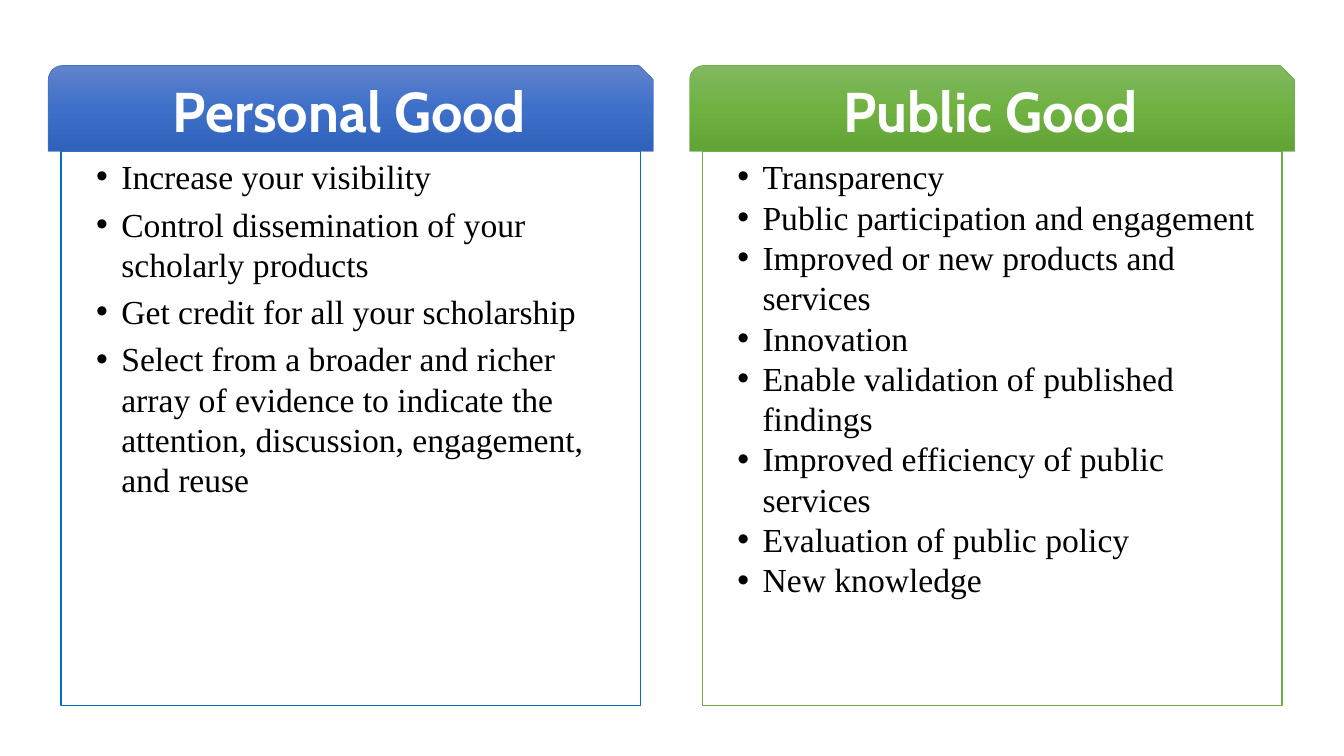
from copy import deepcopy
from dataclasses import dataclass

from lxml import etree
from pptx import Presentation
from pptx import util as u
from pptx.dml.color import RGBColor
from pptx.enum import shapes, text
from pptx.oxml import ns


@dataclass(frozen=True)
class Theme:
    head_font: str = "Cabin"
    body_font: str = "Times New Roman"
    head_size: int = 40
    body_size: int = 24
    leading: float = 28.8
    white: str = "FFFFFF"
    ink: str = "000000"
    blue: tuple = ("6183CB", "3E70CA", "3062BB")
    green: tuple = ("81B861", "6FB242", "62A336")
    blue_edge: str = "4472C4"
    blue_frame: str = "0070C0"
    green_edge: str = "70AD47"


T = Theme()
WIDE, HIGH = 13.33, 7.5
LEFT, TOP, COL, GAP = 0.48, 0.65, 6, 0.36
HEAD, BODY, INSET = 0.85, 5.5, 0.125

PANELS = [
    dict(title="Personal Good", shades=T.blue, edge=T.blue_edge,
         frame=T.blue_frame, gap=5, items=[
             "Increase your visibility",
             "Control dissemination of your scholarly products",
             "Get credit for all your scholarship",
             "Select from a broader and richer array of evidence to indicate "
             "the attention, discussion, engagement, and reuse"]),
    dict(title="Public Good", shades=T.green, edge=T.green_edge,
         frame=T.green_edge, gap=0, items=[
             "Transparency",
             "Public participation and engagement",
             "Improved or new products and services",
             "Innovation",
             "Enable validation of published findings",
             "Improved efficiency of public services",
             "Evaluation of public policy",
             "New knowledge"]),
]


def block(slide, kind, box, line, weight):
    shape = slide.shapes.add_shape(kind, *(u.Inches(n) for n in box))
    shape.shadow.inherit = False
    shape.line.color.rgb = RGBColor.from_string(line)
    shape.line.width = u.Pt(weight)
    return shape


def blend(shape, shades):
    """Fill a shape from top to bottom with evenly spaced shades."""
    fill = shape.fill
    fill.gradient()
    fill.gradient_angle = 270
    stops = shape._element.spPr.find(ns.qn("a:gradFill")).find(ns.qn("a:gsLst"))
    while len(stops) < len(shades):
        stops.append(deepcopy(stops[0]))
    for i, (stop, shade) in enumerate(zip(fill.gradient_stops, shades)):
        stop.position = i / (len(shades) - 1)
        stop.color.rgb = RGBColor.from_string(shade)


def bullet(para):
    props = para._p.get_or_add_pPr()
    props.set("marL", str(u.Inches(0.5)))
    props.set("indent", str(u.Inches(-0.25)))
    etree.SubElement(props, ns.qn("a:buFont")).set("typeface", "Arial")
    etree.SubElement(props, ns.qn("a:buChar")).set("char", "•")


def write(shape, lines, *, font, size, color, bold=False, dots=False,
          align=text.PP_ALIGN.LEFT, anchor=text.MSO_ANCHOR.TOP,
          gap=0, leading=None):
    frame = shape.text_frame
    frame.word_wrap = True
    frame.vertical_anchor = anchor
    for i, line in enumerate(lines):
        para = frame.add_paragraph() if i else frame.paragraphs[0]
        if dots:
            bullet(para)
        para.alignment = align
        if i:
            para.space_before = u.Pt(gap)
        if leading:
            para.line_spacing = u.Pt(leading)
        run = para.add_run()
        run.text = line
        run.font.name, run.font.size = font, u.Pt(size)
        run.font.bold = bold
        run.font.color.rgb = RGBColor.from_string(color)


def panel(slide, box, title, shades, edge, frame, gap, items):
    """Place a framed list under a wider heading tab."""
    x, y, w, h = box
    kind = shapes.MSO_SHAPE
    body = block(slide, kind.RECTANGLE,
                 (x + INSET, y + HEAD, w - 2 * INSET, h - HEAD), frame, 1)
    body.fill.background()
    write(body, items, font=T.body_font, size=T.body_size, color=T.ink,
          dots=True, gap=gap, leading=T.leading)
    head = block(slide, kind.SNIP_ROUND_RECTANGLE, (x, y, w, HEAD), edge, 0.5)
    blend(head, shades)
    write(head, [title], font=T.head_font, size=T.head_size, color=T.white,
          bold=True, align=text.PP_ALIGN.CENTER, anchor=text.MSO_ANCHOR.MIDDLE)


def main():
    deck = Presentation()
    deck.slide_width, deck.slide_height = u.Inches(WIDE), u.Inches(HIGH)
    slide = deck.slides.add_slide(deck.slide_layouts[6])
    for i, part in enumerate(PANELS):
        panel(slide, (LEFT + i * (COL + GAP), TOP, COL, HEAD + BODY), **part)
    deck.save("out.pptx")


if __name__ == "__main__":
    main()
